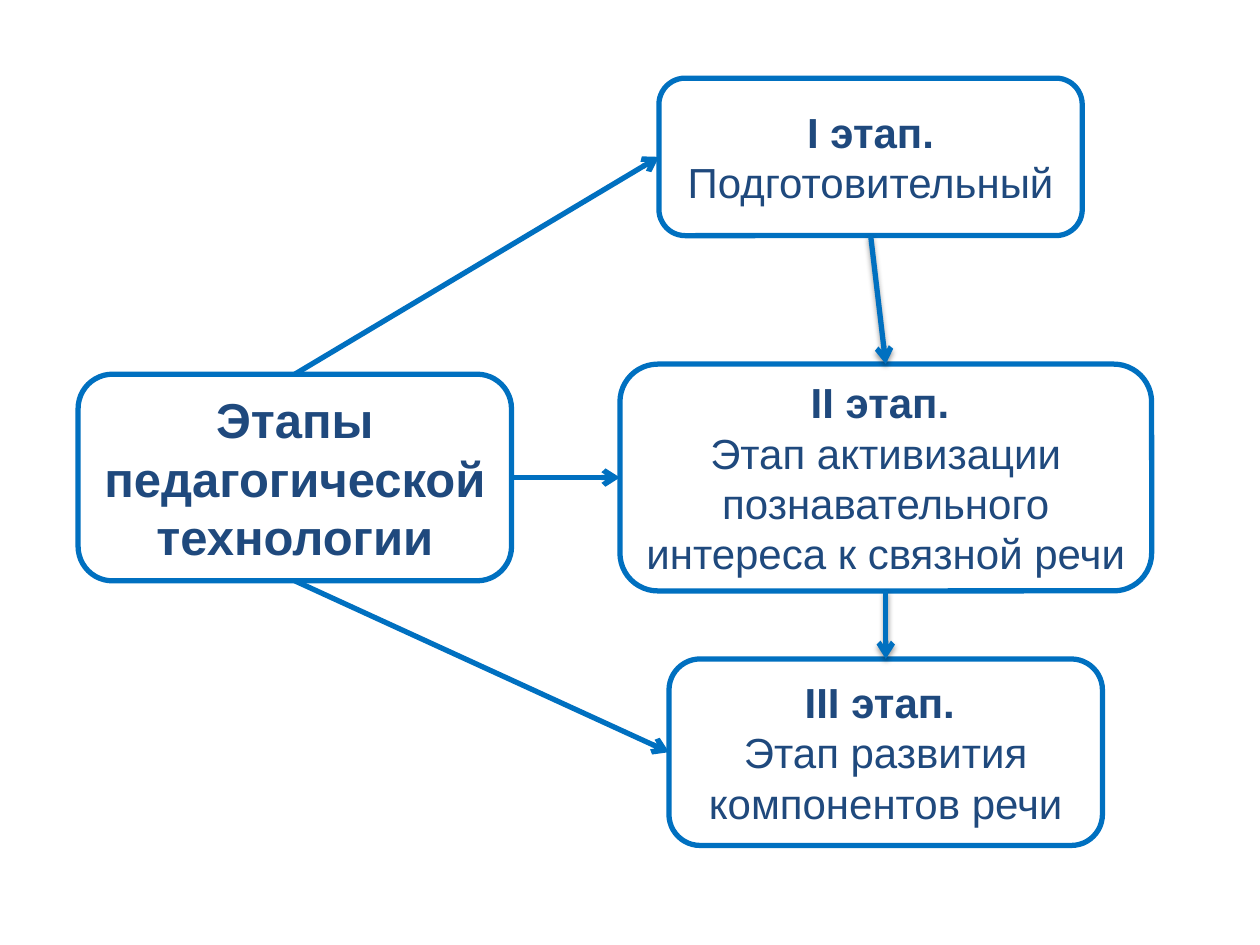
import pptx
import pptx.util
from lxml import etree
from pptx.dml.color import RGBColor
from pptx.enum.shapes import MSO_CONNECTOR, MSO_SHAPE
from pptx.enum.text import MSO_ANCHOR, PP_ALIGN
from pptx.oxml.ns import qn
from pptx.util import Inches, Pt

BLUE, NAVY, WHITE = "0070C0", "1F497D", "FFFFFF"
TOP, LEFT, BOTTOM = 0, 1, 2
RIGHT = 3

# key: (left, top, width, height), text size, paragraphs of (text, bold) runs
BOXES = {
    "stages": ((0.62, 2.97, 3.44, 1.64), 28,
               [[("Этапы педагогической технологии", True)]]),
    "first": ((5.23, 0.62, 3.36, 1.25), 24,
              [[("I этап. ", True), ("Подготовительный", False)]]),
    "second": ((4.92, 2.89, 4.22, 1.8), 24,
               [[("II этап. ", True)],
                [("Этап активизации познавательного интереса к связной речи", False)]]),
    "third": ((5.31, 5.23, 3.44, 1.48), 24,
              [[("III этап. ", True)],
               [("Этап развития компонентов речи", False)]]),
}

# from box, side, to box, side, has shadow
ARROWS = [
    ("first", BOTTOM, "second", TOP, True),
    ("stages", TOP, "first", LEFT, False),
    ("second", BOTTOM, "third", TOP, True),
    ("stages", RIGHT, "second", LEFT, False),
    ("stages", BOTTOM, "third", LEFT, False),
]


def color(hex_value):
    return RGBColor.from_string(hex_value)


def set_line(line):
    line.color.rgb = color(BLUE)
    line.width = Pt(3)


def add_text(paragraph, text, *, size, bold=False, font="Arial", fill=NAVY):
    run = paragraph.add_run()
    run.text = text
    run.font.name = font
    run.font.size = Pt(size)
    run.font.bold = bold
    run.font.color.rgb = color(fill)


def add_box(slide, place, size, paragraphs):
    box = slide.shapes.add_shape(MSO_SHAPE.ROUNDED_RECTANGLE, *map(Inches, place))
    box.shadow.inherit = False
    box.fill.solid()
    box.fill.fore_color.rgb = color(WHITE)
    set_line(box.line)
    frame = box.text_frame
    frame.word_wrap = True
    frame.vertical_anchor = MSO_ANCHOR.MIDDLE
    for index, runs in enumerate(paragraphs):
        paragraph = frame.add_paragraph() if index else frame.paragraphs[0]
        paragraph.alignment = PP_ALIGN.CENTER
        for text, bold in runs:
            add_text(paragraph, text, size=size, bold=bold)
    return box


def add_arrow(slide, start, start_side, end, end_side, shadow):
    arrow = slide.shapes.add_connector(MSO_CONNECTOR.STRAIGHT, 0, 0, 0, 0)
    arrow.begin_connect(start, start_side)
    arrow.end_connect(end, end_side)
    set_line(arrow.line)
    properties = arrow._element.spPr
    etree.SubElement(properties.find(qn("a:ln")), qn("a:tailEnd"), type="arrow")
    effects = etree.SubElement(properties, qn("a:effectLst"))
    if shadow:
        outer = etree.SubElement(effects, qn("a:outerShdw"), blurRad=str(Pt(3.1)),
                                 dist=str(Pt(1.6)), dir="5400000", rotWithShape="0")
        black = etree.SubElement(outer, qn("a:srgbClr"), val="000000")
        etree.SubElement(black, qn("a:alpha"), val="38000")


def main():
    deck = pptx.Presentation()
    deck.slide_width, deck.slide_height = Inches(10), Inches(7.5)
    slide = deck.slides.add_slide(deck.slide_layouts[6])
    boxes = {key: add_box(slide, *content) for key, content in BOXES.items()}
    for start, start_side, end, end_side, shadow in ARROWS:
        add_arrow(slide, boxes[start], start_side, boxes[end], end_side, shadow)
    deck.save("out.pptx")


if __name__ == "__main__":
    main()
